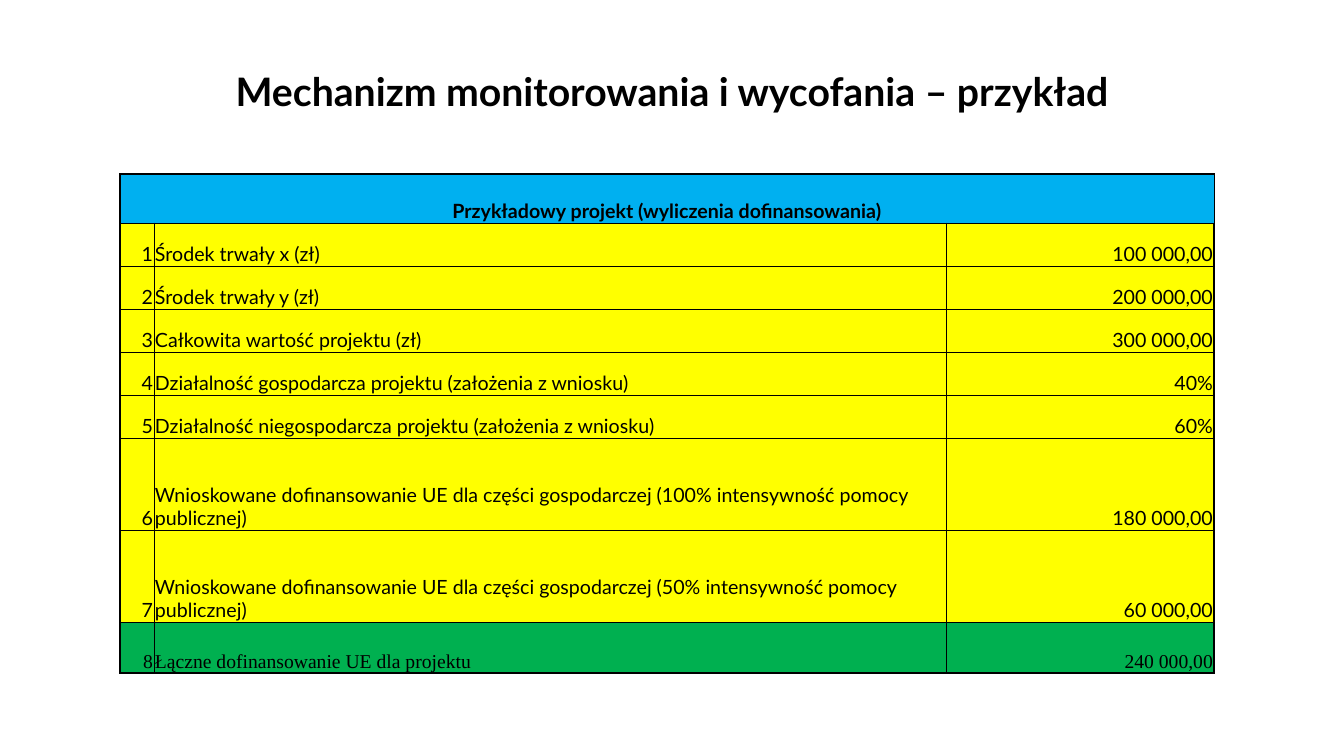
from lxml.etree import SubElement
from pptx import Presentation
from pptx.dml.color import RGBColor
from pptx.enum.text import MSO_ANCHOR as Anchor, PP_ALIGN as Align
from pptx.oxml.ns import qn
from pptx.util import Emu, Pt

EMU_PER_PX = 914400 / 100.8
COLORS = {"ink": "000000", "header": "00B0F0", "item": "FFFF00", "total": "00B050"}
THIN, THICK = 0.5, 1.5

TITLE = "Mechanizm monitorowania i wycofania – przykład"
HEADER = "Przykładowy projekt (wyliczenia dofinansowania)"
ITEMS = [
    ("Środek trwały x (zł)", "100 000,00"),
    ("Środek trwały y (zł)", "200 000,00"),
    ("Całkowita wartość projektu (zł)", "300 000,00"),
    ("Działalność gospodarcza projektu (założenia z wniosku)", "40%"),
    ("Działalność niegospodarcza projektu (założenia z wniosku)", "60%"),
    ("Wnioskowane dofinansowanie UE dla części gospodarczej "
     "(100% intensywność pomocy publicznej)", "180 000,00"),
    ("Wnioskowane dofinansowanie UE dla części gospodarczej "
     "(50% intensywność pomocy publicznej)", "60 000,00"),
    ("Łączne dofinansowanie UE dla projektu", "240 000,00"),
]
COLUMN_WIDTHS = [34, 792, 268]
ROW_HEIGHTS = [49] + [43] * 5 + [92, 92, 51]


def px(length):
    return Emu(round(length * EMU_PER_PX))


def rgb(name):
    return RGBColor.from_string(COLORS[name])


def write(frame, text, size, align, font="Lato", bold=False):
    paragraph = frame.paragraphs[0]
    paragraph.alignment = align
    run = paragraph.add_run()
    run.text = text
    run.font.size = Pt(size)
    run.font.name = font
    run.font.bold = bold
    run.font.color.rgb = rgb("ink")


def add_borders(cell, row, column):
    """Thick lines around the table, thin lines inside it."""
    outer_sides = {
        "a:lnL": column == 0,
        "a:lnR": column == len(COLUMN_WIDTHS) - 1,
        "a:lnT": row == 0,
        "a:lnB": row == len(ROW_HEIGHTS) - 1,
    }
    properties = cell._tc.get_or_add_tcPr()
    for side, outer in outer_sides.items():
        line = SubElement(properties, qn(side), w=str(Pt(THICK if outer else THIN)))
        fill = SubElement(line, qn("a:solidFill"))
        SubElement(fill, qn("a:srgbClr"), val=COLORS["ink"])


def format_cell(cell, row, column, color):
    add_borders(cell, row, column)
    cell.fill.solid()
    cell.fill.fore_color.rgb = rgb(color)
    cell.vertical_anchor = Anchor.BOTTOM
    cell.margin_left = cell.margin_right = cell.margin_top = px(1)
    cell.margin_bottom = 0


def add_title(slide):
    title = slide.shapes.title
    title.left, title.top, title.width, title.height = map(px, (67, 62, 1210, 81))
    title.text_frame.vertical_anchor = Anchor.TOP
    write(title.text_frame, TITLE, 28, Align.CENTER, bold=True)


def add_funding_table(slide):
    funding = slide.shapes.add_table(
        len(ROW_HEIGHTS), len(COLUMN_WIDTHS), px(120), px(174),
        px(sum(COLUMN_WIDTHS)), px(sum(ROW_HEIGHTS))).table
    funding.first_row = funding.horz_banding = False
    for column, width in zip(funding.columns, COLUMN_WIDTHS):
        column.width = px(width)
    for row, height in zip(funding.rows, ROW_HEIGHTS):
        row.height = px(height)

    # Header across all columns
    for column in range(len(COLUMN_WIDTHS)):
        format_cell(funding.cell(0, column), 0, column, "header")
    heading = funding.cell(0, 0)
    heading.merge(funding.cell(0, len(COLUMN_WIDTHS) - 1))
    write(heading.text_frame, HEADER, 14, Align.CENTER, bold=True)

    # Numbered items, the last one being the total
    for number, (label, amount) in enumerate(ITEMS, 1):
        is_total = number == len(ITEMS)
        color, font = ("total", "Times New Roman") if is_total else ("item", "Lato")
        for column, text in enumerate((str(number), label, amount)):
            cell = funding.cell(number, column)
            format_cell(cell, number, column, color)
            align = Align.LEFT if column == 1 else Align.RIGHT
            write(cell.text_frame, text, 14, align, font)


def main():
    deck = Presentation()
    deck.slide_width, deck.slide_height = px(1344), px(756)
    slide = deck.slides.add_slide(deck.slide_layouts[5])
    add_funding_table(slide)
    add_title(slide)
    deck.save("out.pptx")


if __name__ == "__main__":
    main()
